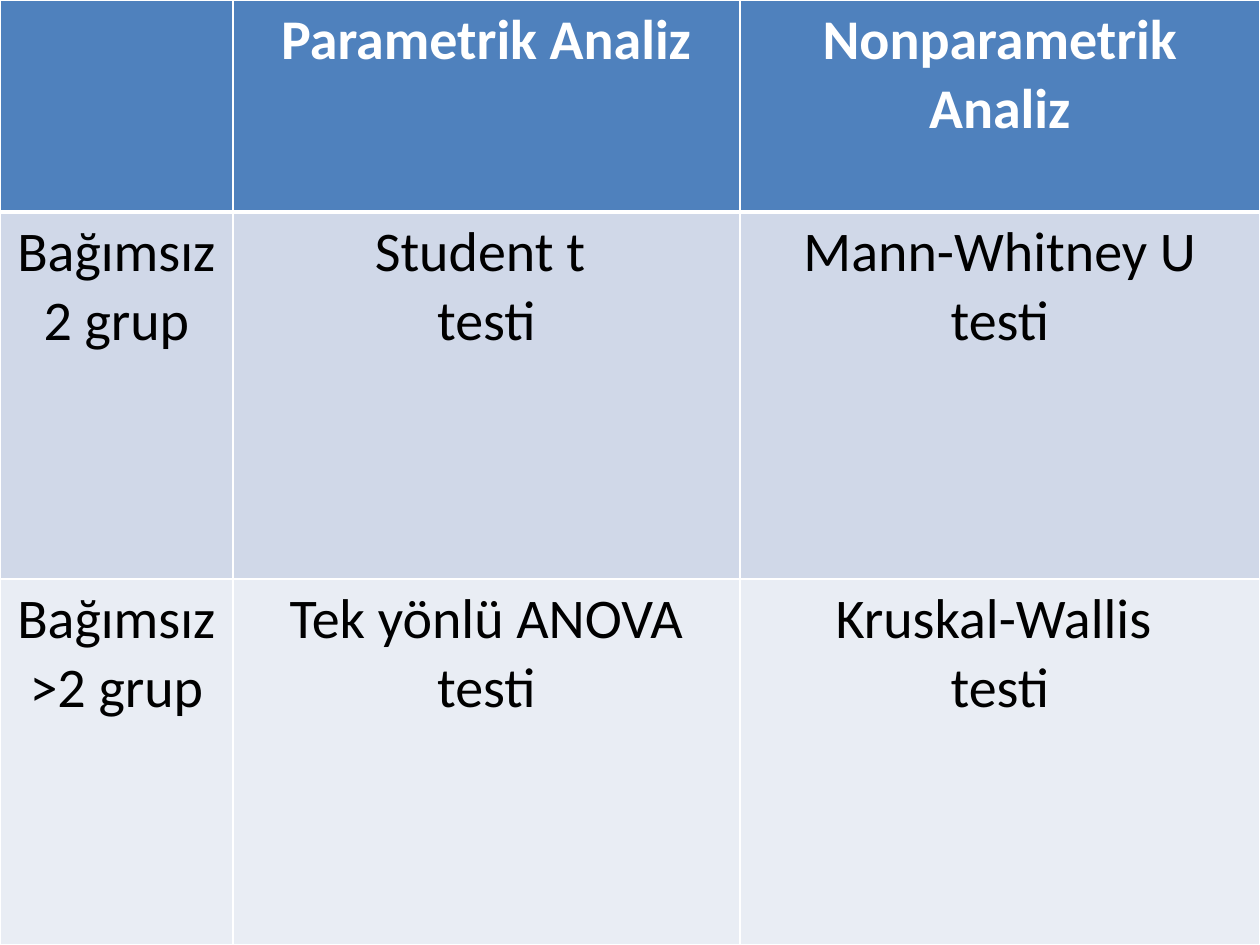
import pptx
import pptx.dml.color
import pptx.enum.text
import pptx.util
import lxml.etree
import pptx.oxml.ns

RGBColor = pptx.dml.color.RGBColor
WHITE = RGBColor(0xFF, 0xFF, 0xFF)
BLACK = RGBColor(0x00, 0x00, 0x00)
BLUE = RGBColor(0x4F, 0x81, 0xBD)
BAND_DARK = RGBColor(0xD0, 0xD8, 0xE8)
BAND_LIGHT = RGBColor(0xE9, 0xED, 0xF4)

COLUMNS = [233, 507, 520]
ROWS = [212, 367, 366]
FILLS = [BLUE, BAND_DARK, BAND_LIGHT]
TESTS = [
    [[], ["Parametrik Analiz"], ["Nonparametrik Analiz"]],
    [["Bağımsız", "2 grup"], ["Student t ", "testi"], ["Mann-Whitney U testi"]],
    [["Bağımsız", ">2 grup"], ["Tek yönlü ANOVA testi"], ["Kruskal-Wallis ", "testi"]],
]


class Deck:
    """Holds the slide style and draws elements on the current slide."""

    font = "Calibri"
    size = 32
    scale = 914400 / 126

    def __init__(self, width, height):
        self.prs = pptx.Presentation()
        self.prs.slide_width = self.px(width)
        self.prs.slide_height = self.px(height)
        self.s = self.prs.slides.add_slide(self.prs.slide_layouts[6])

    def px(self, n):
        return pptx.util.Emu(round(n * self.scale))

    def border(self, cell, side, width):
        qn = pptx.oxml.ns.qn
        tcPr = cell._tc.get_or_add_tcPr()
        ln = lxml.etree.SubElement(tcPr, qn("a:ln" + side), w=str(pptx.util.Pt(width)))
        fill = lxml.etree.SubElement(ln, qn("a:solidFill"))
        lxml.etree.SubElement(fill, qn("a:srgbClr"), val=str(WHITE))

    def text(self, tf, lines, color, bold):
        for i, line in enumerate(lines):
            p = tf.add_paragraph() if i else tf.paragraphs[0]
            p.alignment = pptx.enum.text.PP_ALIGN.CENTER
            r = p.add_run()
            r.text = line
            r.font.name = self.font
            r.font.size = pptx.util.Pt(self.size)
            r.font.bold = bold
            r.font.color.rgb = color

    def table(self, x, y, columns, rows, content, fills):
        frame = self.s.shapes.add_table(
            len(rows), len(columns), self.px(x), self.px(y),
            self.px(sum(columns)), self.px(sum(rows)))
        table = frame.table
        for column, width in zip(table.columns, columns):
            column.width = self.px(width)
        for i, height in enumerate(rows):
            table.rows[i].height = self.px(height)
            header = i == 0
            widths = {"L": 1, "R": 1, "T": 3 if i == 1 else 1, "B": 3 if header else 1}
            for j, lines in enumerate(content[i]):
                cell = table.cell(i, j)
                for side, width in widths.items():
                    self.border(cell, side, width)
                cell.fill.solid()
                cell.fill.fore_color.rgb = fills[i]
                self.text(cell.text_frame, lines, WHITE if header else BLACK, header)


def main():
    deck = Deck(1260, 945)
    deck.table(0, 0, COLUMNS, ROWS, TESTS, FILLS)
    deck.prs.save("out.pptx")


if __name__ == "__main__":
    main()
